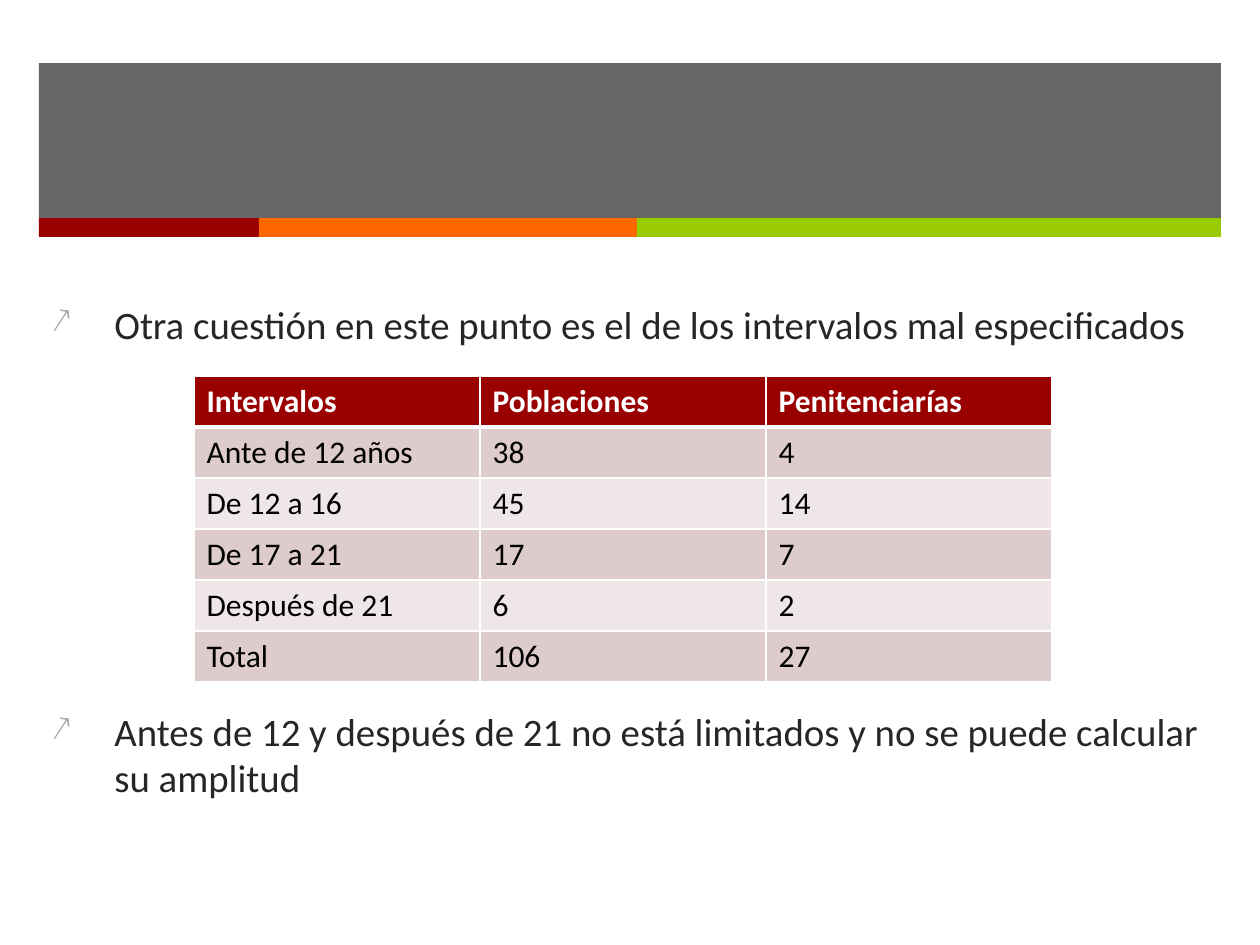
import dataclasses
import itertools

import lxml.etree
import pptx
import pptx.dml.color
import pptx.enum.shapes
import pptx.oxml.ns
import pptx.util

EMU_PER_PX = 914400 / 126
FONT = "Calibri"
MARGIN = 39
BULLET_INDENT = 63
STRIP_TOP, STRIP_HEIGHT = 218, 19
TABLE_LEFT, TABLE_TOP = 194, 376
COLUMN_WIDTH, ROW_HEIGHT = 286, 51
HEADER_FILL = "990000"
BAND_FILLS = ("DECCCC", "EFE7E7")

ROWS = (
    ("Intervalos", "Poblaciones", "Penitenciarías"),
    ("Ante de 12 años", "38", "4"),
    ("De 12 a 16", "45", "14"),
    ("De 17 a 21", "17", "7"),
    ("Después de 21", "6", "2"),
    ("Total", "106", "27"),
)


@dataclasses.dataclass(frozen=True)
class Strip:
    width: int
    color: str


@dataclasses.dataclass(frozen=True)
class BulletPoint:
    text: str
    space_before: int


STRIPS = (Strip(220, "990000"), Strip(378, "FF6600"), Strip(584, "99CC00"))
BANNER_WIDTH = sum(strip.width for strip in STRIPS)
# The second point's spacing leaves room for the table.
POINTS = (
    BulletPoint("Otra cuestión en este punto es el de los intervalos mal especificados", 0),
    BulletPoint("Antes de 12 y después de 21 no está limitados y no se puede calcular su amplitud", 206),
)


def px(length: int) -> pptx.util.Emu:
    return pptx.util.Emu(round(length * EMU_PER_PX))


def rgb(color: str) -> pptx.dml.color.RGBColor:
    return pptx.dml.color.RGBColor.from_string(color)


def add_element(parent, tag: str, **attributes: str):
    return lxml.etree.SubElement(parent, pptx.oxml.ns.qn(tag), attributes)


def write_text(paragraph, text: str, *, size: float, color: str, bold: bool = False) -> None:
    run = paragraph.add_run()
    run.text = text
    run.font.name = FONT
    run.font.size = pptx.util.Pt(size)
    run.font.bold = bold
    run.font.color.rgb = rgb(color)


def add_rectangle(slide, left: int, top: int, width: int, height: int, color: str):
    shape = slide.shapes.add_shape(
        pptx.enum.shapes.MSO_SHAPE.RECTANGLE, px(left), px(top), px(width), px(height)
    )
    shape.shadow.inherit = False
    shape.fill.solid()
    shape.fill.fore_color.rgb = rgb(color)
    shape.line.fill.background()
    return shape


def add_banner(slide) -> None:
    banner = add_rectangle(slide, MARGIN, 63, BANNER_WIDTH, STRIP_TOP - 63, "262626")
    color = banner.fill._xPr.find(".//" + pptx.oxml.ns.qn("a:srgbClr"))
    add_element(color, "a:alpha", val="70000")
    left = MARGIN
    for strip in STRIPS:
        add_rectangle(slide, left, STRIP_TOP, strip.width, STRIP_HEIGHT, strip.color)
        left += strip.width


def set_bullet(paragraph) -> None:
    properties = paragraph._p.get_or_add_pPr()
    properties.set("marL", str(px(BULLET_INDENT)))
    properties.set("indent", str(-px(BULLET_INDENT)))
    add_element(add_element(properties, "a:buClr"), "a:srgbClr", val="A6A6A6")
    add_element(properties, "a:buSzPct", val="90000")
    add_element(properties, "a:buChar", char="↗")


def add_body(slide) -> None:
    box = slide.shapes.add_textbox(px(MARGIN), px(294), px(BANNER_WIDTH), px(551))
    frame = box.text_frame
    frame.word_wrap = True
    for index, point in enumerate(POINTS):
        paragraph = frame.add_paragraph() if index else frame.paragraphs[0]
        paragraph.space_before = pptx.util.Pt(point.space_before)
        set_bullet(paragraph)
        write_text(paragraph, point.text, size=22.2, color="262626")


def set_borders(cell, top: int, bottom: int) -> None:
    """Draw white borders; the widths are in points."""
    properties = cell._tc.get_or_add_tcPr()
    for side, width in {"L": 1, "R": 1, "T": top, "B": bottom}.items():
        line = add_element(properties, f"a:ln{side}", w=str(pptx.util.Pt(width)))
        add_element(add_element(line, "a:solidFill"), "a:srgbClr", val="FFFFFF")


def add_interval_table(slide) -> None:
    column_count = len(ROWS[0])
    table = slide.shapes.add_table(
        len(ROWS), column_count, px(TABLE_LEFT), px(TABLE_TOP),
        px(COLUMN_WIDTH * column_count), px(ROW_HEIGHT * len(ROWS)),
    ).table
    for column in table.columns:
        column.width = px(COLUMN_WIDTH)
    for row in table.rows:
        row.height = px(ROW_HEIGHT)
    for row, column in itertools.product(range(len(ROWS)), range(column_count)):
        cell = table.cell(row, column)
        is_header = row == 0
        set_borders(cell, top=3 if row == 1 else 1, bottom=3 if is_header else 1)
        cell.fill.solid()
        cell.fill.fore_color.rgb = rgb(HEADER_FILL if is_header else BAND_FILLS[(row - 1) % 2])
        write_text(
            cell.text_frame.paragraphs[0], ROWS[row][column],
            size=18, color="FFFFFF" if is_header else "000000", bold=is_header,
        )


def main() -> None:
    presentation = pptx.Presentation()
    presentation.slide_width = px(1260)
    presentation.slide_height = px(945)
    slide = presentation.slides.add_slide(presentation.slide_layouts[6])
    add_banner(slide)
    add_body(slide)
    add_interval_table(slide)
    presentation.save("out.pptx")


if __name__ == "__main__":
    main()
